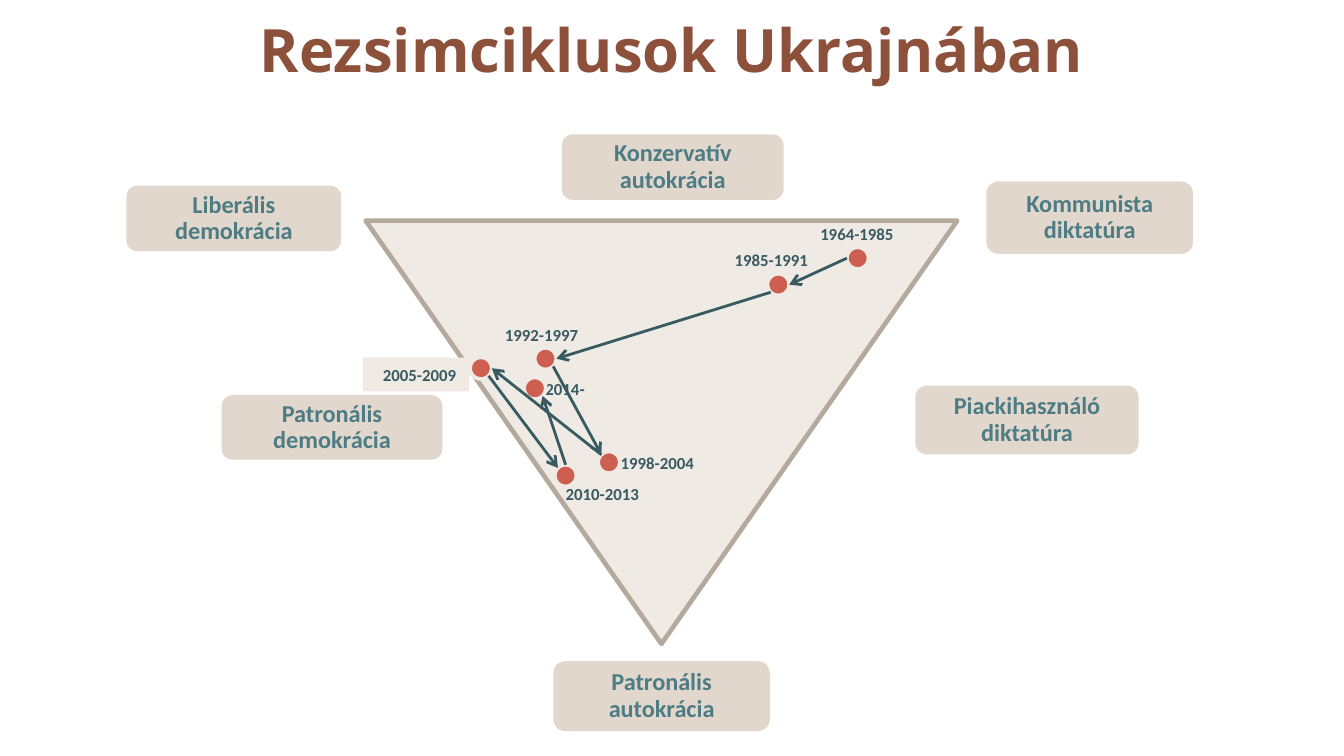
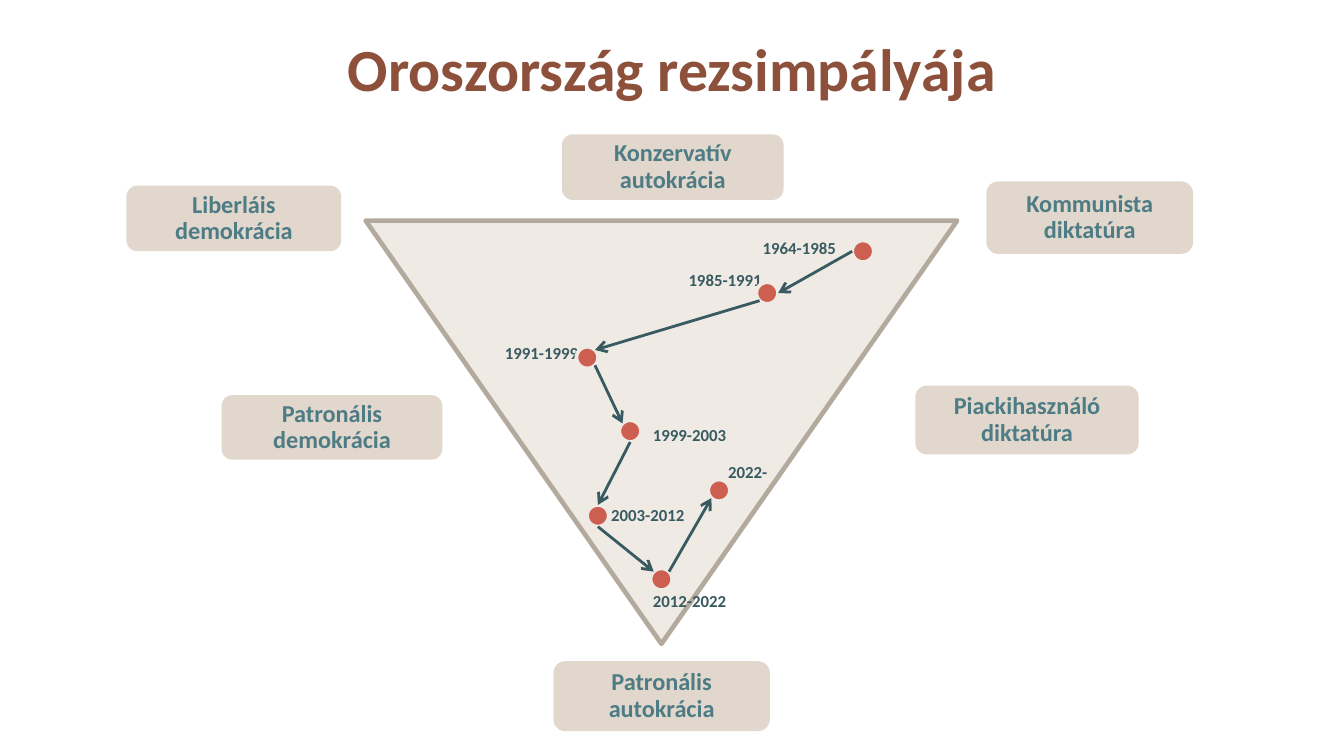
from lxml import etree
from pptx import Presentation
from pptx.dml.color import RGBColor
from pptx.enum.shapes import MSO_CONNECTOR, MSO_SHAPE
from pptx.enum.text import MSO_ANCHOR, MSO_AUTO_SIZE, PP_ALIGN
from pptx.oxml.ns import qn
from pptx.util import Cm, Pt

LEFT, MID, RIGHT = PP_ALIGN.LEFT, PP_ALIGN.CENTER, PP_ALIGN.RIGHT
MIDDLE = MSO_ANCHOR.MIDDLE
FIXED = MSO_AUTO_SIZE.NONE
OVAL, ROUND = MSO_SHAPE.OVAL, MSO_SHAPE.ROUNDED_RECTANGLE
TRIANGLE = MSO_SHAPE.ISOSCELES_TRIANGLE
STRAIGHT = MSO_CONNECTOR.STRAIGHT

RUST = RGBColor(0x8D, 0x50, 0x3B)
CREAM = RGBColor(0xEF, 0xEA, 0xE4)
STONE = RGBColor(0xB3, 0xA9, 0x9D)
TAN = RGBColor(0xC7, 0xB0, 0x9A)
TEAL = RGBColor(0x4D, 0x7C, 0x85)
DARK = RGBColor(0x38, 0x5A, 0x61)
RED = RGBColor(0xCD, 0x5F, 0x50)

FONT = "Calibri"
DOT = 0.41
LABEL = (2.01, 0.64)

# Regime type: left, top, width, height in cm
REGIMES = {
    "Kommunista diktatúra": (18.64, 3.43, 3.91, 1.37),
    "Liberális demokrácia": (2.39, 3.51, 4.06, 1.24),
    "Patronális autokrácia": (10.46, 12.5, 4.09, 1.32),
    "Konzervatív autokrácia": (10.62, 2.54, 4.19, 1.24),
    "Piackihasználó diktatúra": (17.3, 7.29, 4.22, 1.3),
    "Patronális demokrácia": (4.19, 7.47, 4.17, 1.22),
}

# Each stop: period, dot centre, label corner, label alignment,
# side where the arrow arrives, side where the next one leaves
SLIDES = [
    {
        "title": "Rezsimciklusok Ukrajnában",
        "font": "Open Sans",
        "place": (-0.03, 1.88),
        "names": {},
        "filled": "2005-2009",
        "stops": [
            ("1964-1985", (16.21, 4.88), (15.19, 4.11), MID, None, "W"),
            ("1985-1991", (14.71, 5.38), (13.51, 4.6), RIGHT, "E", "SW"),
            ("1992-1997", (10.31, 6.78), (9.23, 6.02), MID, "E", "SE"),
            ("1998-2004", (11.51, 8.74), (11.48, 8.43), LEFT, "NW", "NW"),
            ("2005-2009", (9.09, 6.96), (6.86, 6.76), RIGHT, "E", "SE"),
            ("2010-2013", (10.69, 8.99), (10.44, 9.02), LEFT, "NW", "N"),
            ("2014-", (10.11, 7.34), (10.06, 7.04), LEFT, "SE", None),
        ],
    },
    {
        "title": "Oroszország rezsimpályája",
        "font": FONT,
        "place": (0, 2.54),
        "names": {"Liberális demokrácia": "Liberláis demokrácia"},
        "filled": None,
        "stops": [
            ("1964-1985", (16.31, 4.75), (14.1, 4.37), MID, None, "W"),
            ("1985-1991", (14.5, 5.54), (12.7, 4.98), MID, "E", "SW"),
            ("1991-1999", (11.1, 6.76), (9.23, 6.35), MID, "NE", "SE"),
            ("1999-2003", (11.91, 8.15), (12.09, 7.9), LEFT, "NW", "S"),
            ("2003-2012", (11.3, 9.75), (11.3, 9.42), LEFT, "N", "S"),
            ("2012-2022", (12.5, 10.95), (12.09, 11.05), LEFT, "NW", "NE"),
            ("2022-", (13.59, 9.27), (13.51, 8.61), LEFT, "SW", None),
        ],
    },
]


def write(shape, text, size, color, align, font=FONT):
    frame = shape.text_frame
    frame.text = text
    frame.word_wrap = True
    para = frame.paragraphs[0]
    para.alignment = align
    face = para.runs[0].font
    face.name, face.size, face.bold = font, Pt(size), True
    face.color.rgb = color
    return frame


def add_form(slide, kind, box, fill, line=None, width=0):
    form = slide.shapes.add_shape(kind, *map(Cm, box))
    form.shadow.inherit = False
    form.fill.solid()
    form.fill.fore_color.rgb = fill
    if line is None:
        form.line.fill.background()
    else:
        form.line.color.rgb = line
        form.line.width = Pt(width)
    return form


def add_title(slide, text, font, place):
    title = slide.shapes.title
    top, height = place
    title.left, title.top = Cm(0.3), Cm(top)
    title.width, title.height = Cm(24.8), Cm(height)
    frame = write(title, text, 32, RUST, MID, font)
    frame.vertical_anchor = MIDDLE
    frame.auto_size = FIXED


def add_regime(slide, name, box):
    form = add_form(slide, ROUND, box, TAN)
    color = form.element.spPr.find(qn("a:solidFill"))[0]
    etree.SubElement(color, qn("a:alpha"), val="50000")
    frame = write(form, name, 13, TEAL, MID)
    frame.vertical_anchor = MIDDLE
    frame.margin_left = frame.margin_right = Cm(0.13)
    frame.margin_top = frame.margin_bottom = Cm(0.13)
    frame.paragraphs[0].line_spacing = 0.9


def add_label(slide, text, corner, align, filled):
    box = slide.shapes.add_textbox(*map(Cm, corner + LABEL))
    write(box, text, 9, DARK, align)
    if filled:
        box.fill.solid()
        box.fill.fore_color.rgb = CREAM


def rim(center, side):
    """Point on a dot's edge in a compass direction."""
    reach = DOT / 2 / len(side) ** 0.5
    across = ("E" in side) - ("W" in side)
    down = ("S" in side) - ("N" in side)
    return Cm(center[0] + across * reach), Cm(center[1] + down * reach)


def add_arrow(slide, start, end):
    arrow = slide.shapes.add_connector(STRAIGHT, *start, *end)
    arrow.line.color.rgb = DARK
    arrow.line.width = Pt(1.5)
    props = arrow.element.spPr
    etree.SubElement(props.find(qn("a:ln")), qn("a:tailEnd"), type="arrow")
    etree.SubElement(props, qn("a:effectLst"))


def add_course(slide, stops, filled):
    """Labels, dots, and an arrow from each stop to the next."""
    for period, _, corner, align, _, _ in stops:
        add_label(slide, period, corner, align, period == filled)
    for _, (x, y), *_ in stops:
        box = (x - DOT / 2, y - DOT / 2, DOT, DOT)
        add_form(slide, OVAL, box, RED, CREAM, 2)
    for here, there in zip(stops, stops[1:]):
        add_arrow(slide, rim(here[1], here[5]), rim(there[1], there[4]))


def main():
    deck = Presentation()
    deck.slide_width, deck.slide_height = Cm(25.4), Cm(14.29)
    for page in SLIDES:
        slide = deck.slides.add_slide(deck.slide_layouts[5])
        add_title(slide, page["title"], page["font"], page["place"])
        field = add_form(slide, TRIANGLE, (6.91, 4.17, 11.18, 8), CREAM, STONE, 2.5)
        field.rotation = 180
        for name, box in REGIMES.items():
            add_regime(slide, page["names"].get(name, name), box)
        add_course(slide, page["stops"], page["filled"])
    deck.save("out.pptx")


if __name__ == "__main__":
    main()
